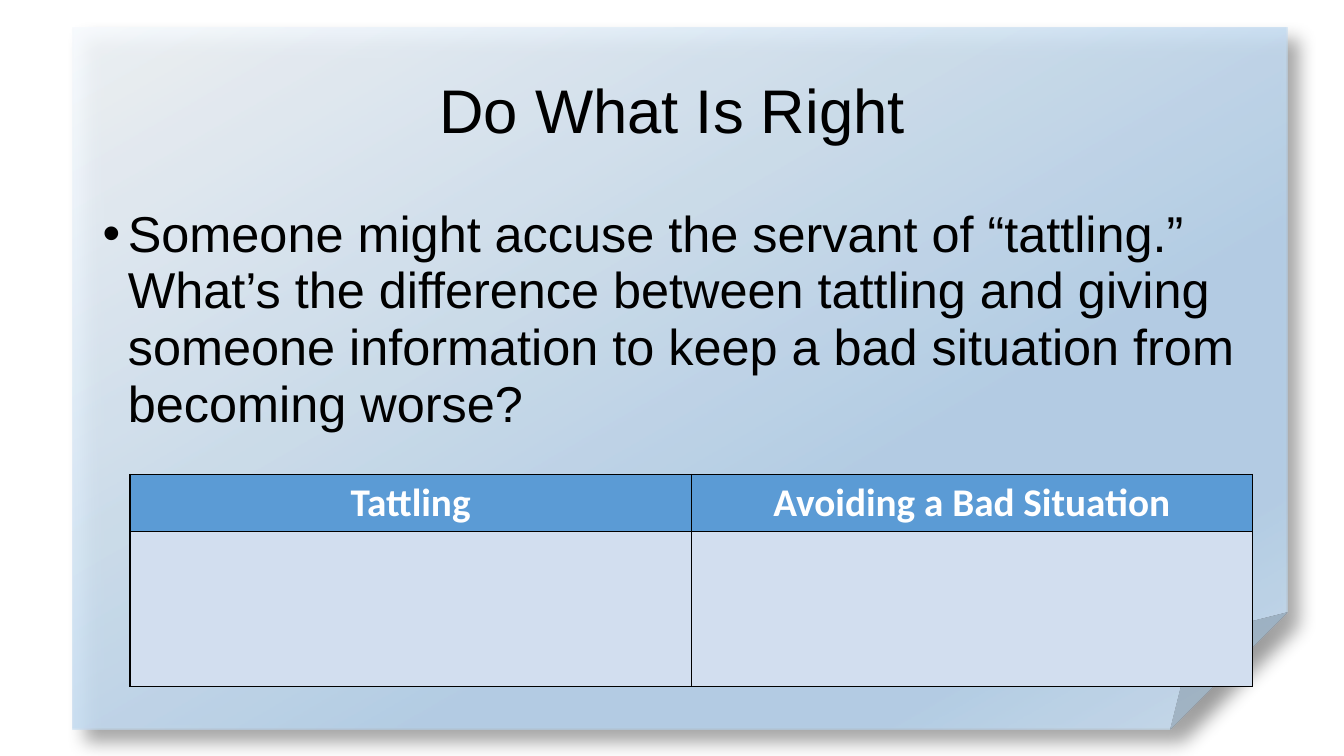
from dataclasses import dataclass
from lxml.etree import SubElement as add_node
from pptx import Presentation
from pptx.dml.color import RGBColor as Color
from pptx.enum.shapes import MSO_SHAPE as Preset
from pptx.enum.text import MSO_ANCHOR as Anchor, PP_ALIGN as Align
from pptx.oxml.ns import qn
from pptx.util import Inches, Pt


@dataclass(frozen=True)
class Theme:
    ink: str = "000000"
    white: str = "FFFFFF"
    header: str = "5B9BD5"
    cell: str = "D2DEEF"
    # Position in percent and colour of each paper gradient stop
    paper: tuple = ((0, "F7FAFD"), (64, "B5D2EC"), (83, "B5D2EC"), (100, "CEE1F2"))
    paper_opacity: int = 87
    shadow_opacity: int = 40
    font: str = "Arial"
    table_font: str = "Calibri"
    title_size: int = 44
    body_size: int = 36
    table_size: int = 28


def node(parent, tag, **attributes):
    return add_node(parent, qn(tag), {key: str(value) for key, value in attributes.items()})


def add_color(parent, color, opacity=100):
    node(node(parent, "a:srgbClr", val=color), "a:alpha", val=opacity * 1000)


class SlideBuilder:
    """Places elements by percentages of the slide's width and height."""

    def __init__(self, deck, theme):
        self.deck, self.theme = deck, theme
        self.page = deck.slides.add_slide(deck.slide_layouts[6])

    def area(self, left, top, width, height):
        across, down = self.deck.slide_width / 100, self.deck.slide_height / 100
        return [int(value) for value in
                (left * across, top * down, width * across, height * down)]

    def style(self, para, font, size, color, bold=False):
        para.font.name, para.font.size, para.font.bold = font, Pt(size), bold
        para.font.color.rgb = Color.from_string(color)

    def paper(self, *place):
        theme = self.theme
        sheet = self.page.shapes.add_shape(Preset.FOLDED_CORNER, *self.area(*place))
        sheet.line.fill.background()
        sheet.shadow.inherit = False
        properties = sheet._element.spPr
        # Gradient fill, running down to the right
        gradient = node(properties, "a:gradFill", rotWithShape=1)
        stops = node(gradient, "a:gsLst")
        for position, color in theme.paper:
            add_color(node(stops, "a:gs", pos=position * 1000), color, theme.paper_opacity)
        node(gradient, "a:lin", ang=60 * 60000, scaled=0)
        properties.find(qn("a:prstGeom")).addnext(gradient)
        # Soft shadow at the lower right
        shadow = node(properties.find(qn("a:effectLst")), "a:outerShdw", blurRad=Pt(13),
                      dist=Pt(13), dir=45 * 60000, algn="tl", rotWithShape=0)
        add_color(shadow, theme.ink, theme.shadow_opacity)

    def text(self, words, size, *place, anchor=Anchor.TOP, align=Align.LEFT,
             spacing=0.9, bullet=False):
        frame = self.page.shapes.add_textbox(*self.area(*place)).text_frame
        frame.word_wrap, frame.vertical_anchor = True, anchor
        para = frame.paragraphs[0]
        para.text, para.alignment, para.line_spacing = words, align, spacing
        if bullet:
            properties = para._p.get_or_add_pPr()
            properties.set("marL", str(Inches(0.25)))
            properties.set("indent", str(-Inches(0.25)))
            node(properties, "a:buFont", typeface=self.theme.font)
            node(properties, "a:buChar", char="•")
        self.style(para, self.theme.font, size, self.theme.ink)

    def border(self, cell):
        properties = cell._tc.get_or_add_tcPr()
        for index, side in enumerate(("a:lnL", "a:lnR", "a:lnT", "a:lnB")):
            line = node(properties, side, w=Pt(1))
            add_color(node(line, "a:solidFill"), self.theme.ink)
            properties.insert(index, line)

    def table(self, headings, row_shares, *place):
        theme = self.theme
        left, top, width, height = self.area(*place)
        grid = self.page.shapes.add_table(
            len(row_shares), len(headings), left, top, width, height).table
        for row, share in zip(grid.rows, row_shares):
            row.height = int(height * share)
        for index, cell in enumerate(grid.iter_cells()):
            is_header = index < len(headings)
            cell.fill.solid()
            cell.fill.fore_color.rgb = Color.from_string(
                theme.header if is_header else theme.cell)
            self.border(cell)
            if is_header:
                para = cell.text_frame.paragraphs[0]
                para.text, para.alignment = headings[index], Align.CENTER
                self.style(para, theme.table_font, theme.table_size, theme.white, bold=True)


def main():
    deck = Presentation()
    deck.slide_width, deck.slide_height = Inches(13.33), Inches(7.5)
    theme = Theme()
    slide = SlideBuilder(deck, theme)

    # Folded paper background
    slide.paper(5.4, 3.6, 90.4, 92.93)

    # Title and question
    slide.text("Do What Is Right", theme.title_size, 6.9, 5.33, 86.27, 19.33,
               anchor=Anchor.MIDDLE, align=Align.CENTER)
    slide.text("Someone might accuse the servant of “tattling.” What’s the difference "
               "between tattling and giving someone information to keep a bad situation "
               "from becoming worse?", theme.body_size, 6.9, 26.67, 86.27, 63.47,
               spacing=0.94, bullet=True)

    # Comparison table
    slide.table(("Tattling", "Avoiding a Bad Situation"), (0.27, 0.73),
                9.68, 62.75, 83.5, 28.05)

    deck.save("out.pptx")


if __name__ == "__main__":
    main()
